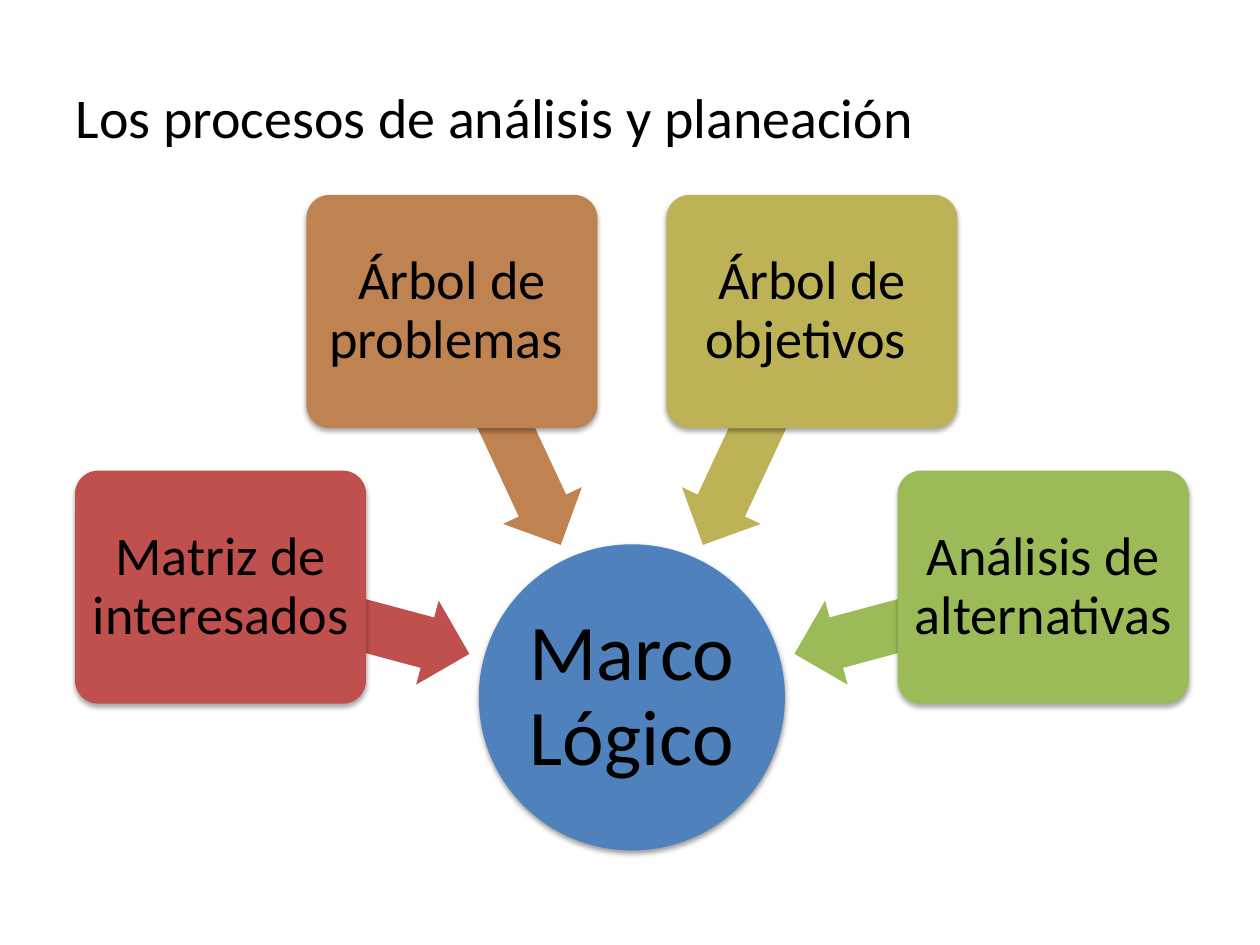
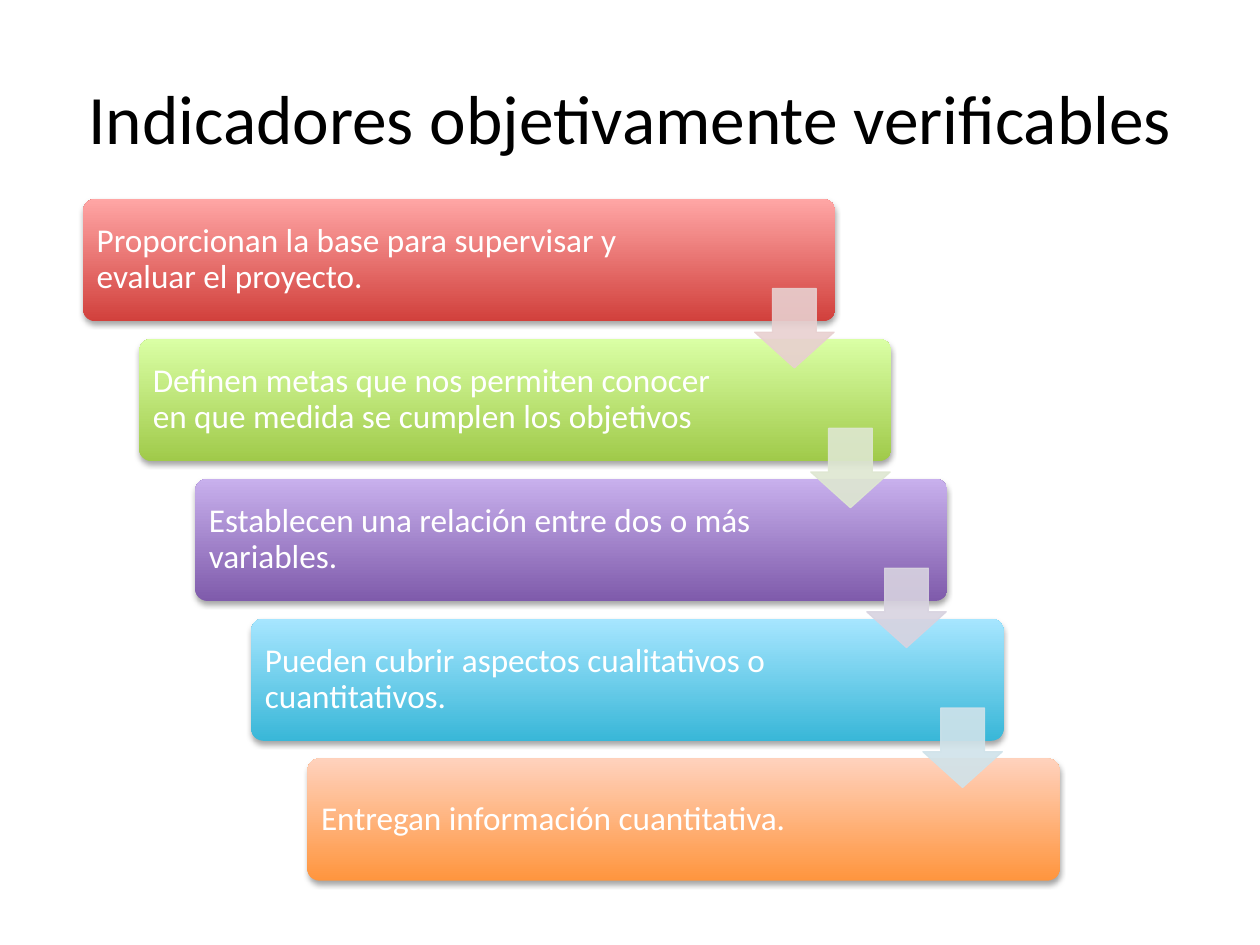
import math

from lxml import etree
from pptx import Presentation
from pptx.dml.color import RGBColor
from pptx.enum import shapes, text
from pptx.oxml import ns
from pptx.util import Inches, Pt

FONT = "Calibri"
BLACK = RGBColor(0x00, 0x00, 0x00)
WHITE = RGBColor(0xFF, 0xFF, 0xFF)
BLUE = RGBColor(0x4F, 0x81, 0xBD)
RED = RGBColor(0xC0, 0x50, 0x4D)
BROWN = RGBColor(0xBE, 0x83, 0x51)
OLIVE = RGBColor(0xBD, 0xB2, 0x55)
GREEN = RGBColor(0x9B, 0xBB, 0x59)

TITLE_BOX = (0.5, 0.3, 9, 1.25)
FAN_BOX = (0.59, 1.55, 8.85, 5.2)
STAIRS_BOX = (0.66, 1.58, 7.75, 5.41)

PROCESSES = [
    ("Matriz de interesados", RED),
    ("Árbol de problemas ", BROWN),
    ("Árbol de objetivos ", OLIVE),
    ("Análisis de alternativas", GREEN),
]

# Text, bottom colour, top colour, colour of the arrow to the next step
INDICATORS = [
    ("Proporcionan la base para supervisar y evaluar el proyecto.",
     RGBColor(0xD1, 0x40, 0x3C), RGBColor(0xFF, 0xA6, 0xA5), RGBColor(0xE8, 0xD0, 0xD0)),
    ("Definen metas que nos permiten conocer en que medida se cumplen los objetivos",
     RGBColor(0xA0, 0xCA, 0x4A), RGBColor(0xDA, 0xFF, 0xA5), RGBColor(0xDE, 0xE7, 0xD1)),
    ("Establecen una relación entre dos o más variables.",
     RGBColor(0x7F, 0x5B, 0xAB), RGBColor(0xC8, 0xB0, 0xED), RGBColor(0xD8, 0xD3, 0xE0)),
    ("Pueden cubrir aspectos cualitativos o cuantitativos.",
     RGBColor(0x39, 0xB7, 0xD8), RGBColor(0xA7, 0xE6, 0xFF), RGBColor(0xD0, 0xE3, 0xEA)),
    ("Entregan información cuantitativa.",
     RGBColor(0xFF, 0x95, 0x3E), RGBColor(0xFF, 0xD2, 0xBD), None),
]


def set_attributes(target, **values):
    for name, value in values.items():
        setattr(target, name, value)


def write_text(shape, words, size, color, align, margins=None, line_spacing=None):
    """Fill a shape with one paragraph; margins are left, top, right, bottom."""
    frame = shape.text_frame
    frame.text = words
    set_attributes(frame, word_wrap=True, auto_size=text.MSO_AUTO_SIZE.NONE,
                   vertical_anchor=text.MSO_ANCHOR.MIDDLE)
    if margins:
        sides = ("margin_left", "margin_top", "margin_right", "margin_bottom")
        set_attributes(frame, **dict(zip(sides, map(Inches, margins))))
    paragraph = frame.paragraphs[0]
    set_attributes(paragraph, alignment=align, line_spacing=line_spacing)
    set_attributes(paragraph.runs[0].font, name=FONT, size=Pt(size))
    paragraph.runs[0].font.color.rgb = color


def add_plain_shape(slide, kind, box, color=None, adjustments=()):
    shape = slide.shapes.add_shape(kind, *map(Inches, box))
    shape.shadow.inherit = False
    shape.line.fill.background()
    if color is not None:
        shape.fill.solid()
        shape.fill.fore_color.rgb = color
    for index, value in enumerate(adjustments):
        shape.adjustments[index] = value
    return shape


def add_shadow(shape, distance=1.8, opacity=35):
    """Cast a soft black shadow straight down."""
    effects = shape._element.spPr.find(ns.qn("a:effectLst"))
    shadow = etree.SubElement(effects, ns.qn("a:outerShdw"), blurRad=str(Pt(3.1)),
                              dist=str(Pt(distance)), dir="5400000", rotWithShape="0")
    color = etree.SubElement(shadow, ns.qn("a:srgbClr"), val="000000")
    etree.SubElement(color, ns.qn("a:alpha"), val=str(opacity * 1000))


def set_opacity(shape, percent):
    for color in shape._element.spPr.iter(ns.qn("a:srgbClr")):
        etree.SubElement(color, ns.qn("a:alpha"), val=str(percent * 1000))


def add_titled_slide(presentation, title, size, align):
    slide = presentation.slides.add_slide(presentation.slide_layouts[5])
    left, top, width, height = map(Inches, TITLE_BOX)
    set_attributes(slide.shapes.title, left=left, top=top, width=width, height=height)
    write_text(slide.shapes.title, title, size, BLACK, align)
    return slide


def add_process_fan(slide, box):
    """Set the processes on an arc, each with an arrow to the central circle."""
    left, top, width, height = box
    diameter, node_width, node_height = 2.43, 2.31, 1.85
    arrow_width, arrow_height = 2.05, 0.69
    node_radius, arrow_radius = 3.38, 2.36
    center_x = left + width / 2
    center_y = top + height - diameter / 2

    def box_on_arc(angle, radius, item_width, item_height):
        x = center_x - radius * math.cos(math.radians(angle))
        y = center_y - radius * math.sin(math.radians(angle))
        return x - item_width / 2, y - item_height / 2, item_width, item_height

    circle = add_plain_shape(slide, shapes.MSO_SHAPE.OVAL,
                             box_on_arc(0, 0, diameter, diameter), BLUE)
    add_shadow(circle, 1.6, 38)
    write_text(circle, "Marco Lógico", 45, BLACK, text.PP_ALIGN.CENTER, [0.03] * 4, 0.9)

    for index, (name, color) in enumerate(PROCESSES):
        angle = 15 + 50 * index
        arrow = add_plain_shape(slide, shapes.MSO_SHAPE.LEFT_ARROW,
                                box_on_arc(angle, arrow_radius, arrow_width, arrow_height),
                                color, (0.6, 0.5))
        arrow.rotation = 180 + angle
        node = add_plain_shape(slide, shapes.MSO_SHAPE.ROUNDED_RECTANGLE,
                               box_on_arc(angle, node_radius, node_width, node_height),
                               color, (0.1,))
        add_shadow(node)
        write_text(node, name, 31, BLACK, text.PP_ALIGN.CENTER, [0.06] * 4, 0.9)


def add_indicator_stairs(slide, box):
    """Lay the indicators out as descending steps, with arrows on top."""
    left, top, width, height = box
    step_width, step_height, arrow_size = 5.97, 0.97, 0.63
    shift_x = (width - step_width) / (len(INDICATORS) - 1)
    shift_y = (height - step_height) / (len(INDICATORS) - 1)
    corners = [(left + shift_x * i, top + shift_y * i) for i in range(len(INDICATORS))]

    for (x, y), (words, bottom_color, top_color, _) in zip(corners, INDICATORS):
        step = add_plain_shape(slide, shapes.MSO_SHAPE.ROUNDED_RECTANGLE,
                               (x, y, step_width, step_height), adjustments=(0.1,))
        step.fill.gradient()
        step.fill.gradient_angle = 90
        for stop, color in zip(step.fill.gradient_stops, (bottom_color, top_color)):
            stop.color.rgb = color
        add_shadow(step)
        write_text(step, words, 19, WHITE, text.PP_ALIGN.LEFT,
                   (0.08, 0.08, 1.16, 0.08), 0.9)

    for (x, y), (*_, arrow_color) in zip(corners[:-1], INDICATORS):
        arrow = add_plain_shape(slide, shapes.MSO_SHAPE.DOWN_ARROW,
                                (x + 5.33, y + 0.71, arrow_size, arrow_size),
                                arrow_color, (0.55, 0.45))
        arrow.line.color.rgb = arrow_color
        arrow.line.width = Pt(0.75)
        set_opacity(arrow, 90)


def main():
    presentation = Presentation()
    set_attributes(presentation, slide_width=Inches(10), slide_height=Inches(7.5))
    processes = add_titled_slide(presentation, "Los procesos de análisis y planeación",
                                 32, text.PP_ALIGN.JUSTIFY)
    add_process_fan(processes, FAN_BOX)
    indicators = add_titled_slide(presentation, "Indicadores objetivamente verificables",
                                  39.6, text.PP_ALIGN.CENTER)
    add_indicator_stairs(indicators, STAIRS_BOX)
    presentation.save("out.pptx")


if __name__ == "__main__":
    main()
